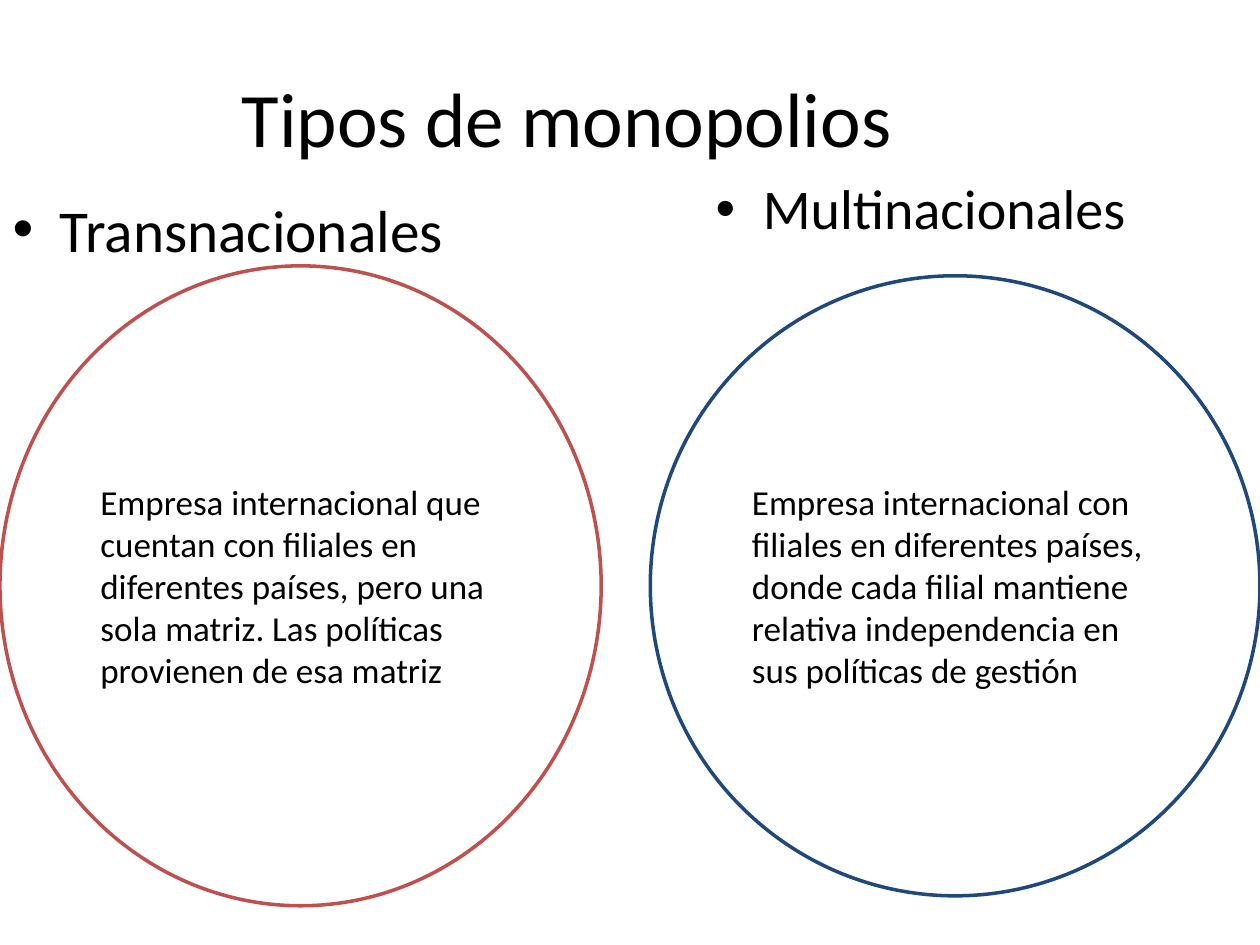
from pptx import Presentation
from pptx.dml.color import RGBColor
from pptx.enum.shapes import MSO_SHAPE
from pptx.enum.text import MSO_ANCHOR as Anchor, MSO_AUTO_SIZE as AutoSize, PP_ALIGN as Align
from pptx.util import Cm, Pt

FONT = "Calibri"
HEADING_W = 11.23


def color(value):
    return RGBColor.from_string(value)


def place(sp, x, y, w, h):
    sp.left, sp.top, sp.width, sp.height = Cm(x), Cm(y), Cm(w), Cm(h)


def write(sp, text, size, align=Align.LEFT, anchor=Anchor.TOP, fill="000000"):
    tf = sp.text_frame
    tf.word_wrap = True
    tf.auto_size = AutoSize.NONE
    tf.vertical_anchor = anchor
    p = tf.paragraphs[0]
    p.alignment = align
    r = p.add_run()
    r.text = text
    r.font.name = FONT
    r.font.size = Pt(size)
    r.font.color.rgb = color(fill)


def add_title(s, box, text):
    sp = s.shapes.title
    place(sp, *box)
    write(sp, text, 44, align=Align.CENTER, anchor=Anchor.MIDDLE)


def add_column(s, box, body, heading, size, heading_h, indent, text, circle_h, line):
    """Heading at the top of the box, circle standing on its bottom edge."""
    x, y, w, h = box
    place(body, x + indent, y, HEADING_W, heading_h)
    write(body, heading, size)

    circle = s.shapes.add_shape(
        MSO_SHAPE.OVAL, Cm(x), Cm(y + h - circle_h), Cm(w), Cm(circle_h))
    circle.shadow.inherit = False
    circle.fill.solid()
    circle.fill.fore_color.rgb = color("FFFFFF")
    circle.line.color.rgb = color(line)
    circle.line.width = Pt(2)
    write(circle, text, 20, anchor=Anchor.MIDDLE)


def main():
    prs = Presentation()
    prs.slide_width, prs.slide_height = Cm(25.4), Cm(19.05)
    s = prs.slides.add_slide(prs.slide_layouts.get_by_name("Two Content"))
    left, right = s.placeholders[1], s.placeholders[2]

    add_title(s, (0, 0.76, 22.86, 3.18), "Tipos de monopolios")
    add_column(
        s, (0, 3.76, 12.12, 14.5), left, "Transnacionales", size=33.9,
        heading_h=1.4, indent=0, circle_h=12.9, line="C0504D",
        text="Empresa internacional que cuentan con filiales en diferentes países, "
             "pero una sola matriz. Las políticas provienen de esa matriz")
    add_column(
        s, (13.11, 3.38, 12.29, 14.68), right, "Multinacionales", size=32,
        heading_h=1.78, indent=1.06, circle_h=12.5, line="1F497D",
        text="Empresa internacional con filiales en diferentes países, donde cada "
             "filial mantiene relativa independencia en sus políticas de gestión")
    prs.save("out.pptx")


if __name__ == "__main__":
    main()
